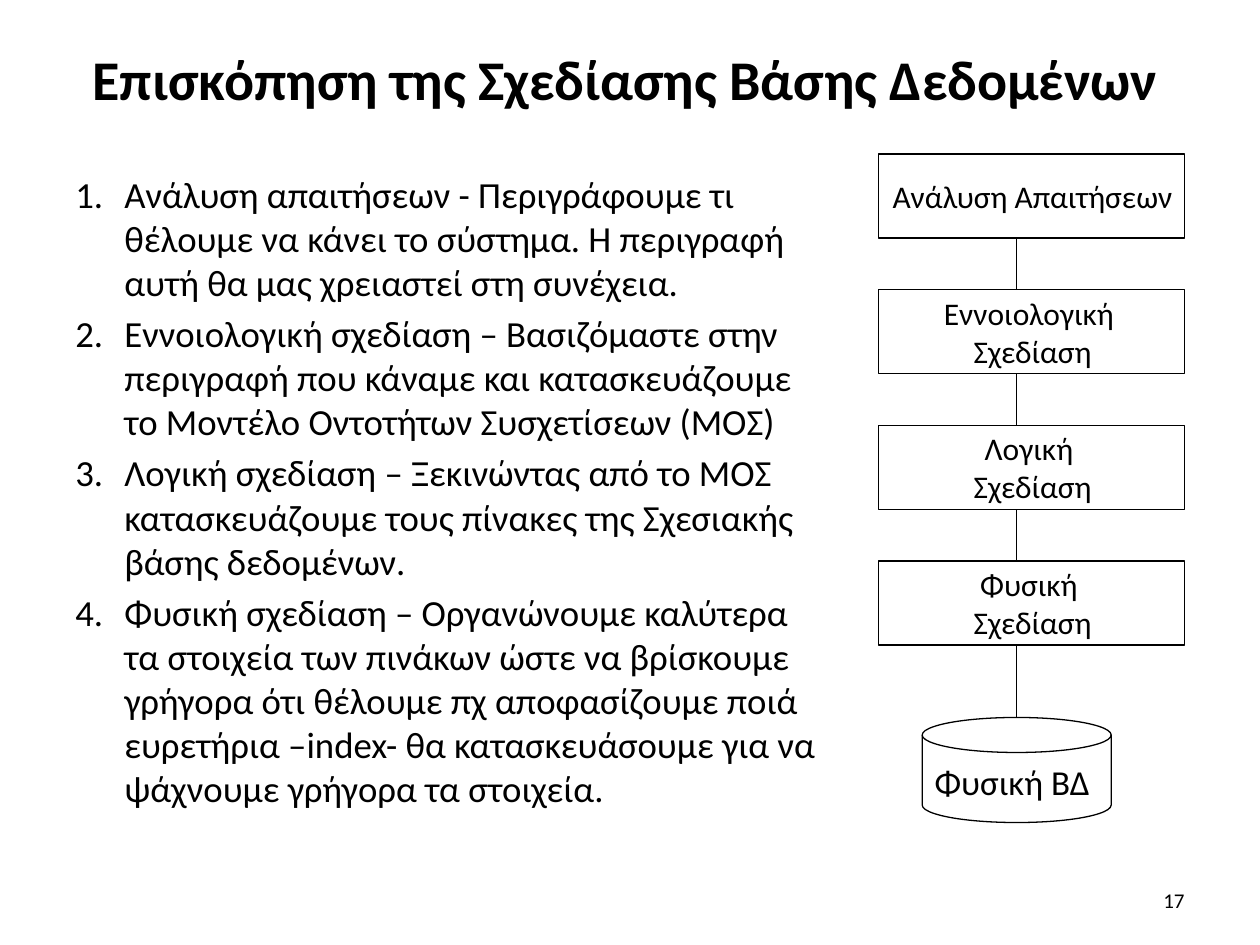
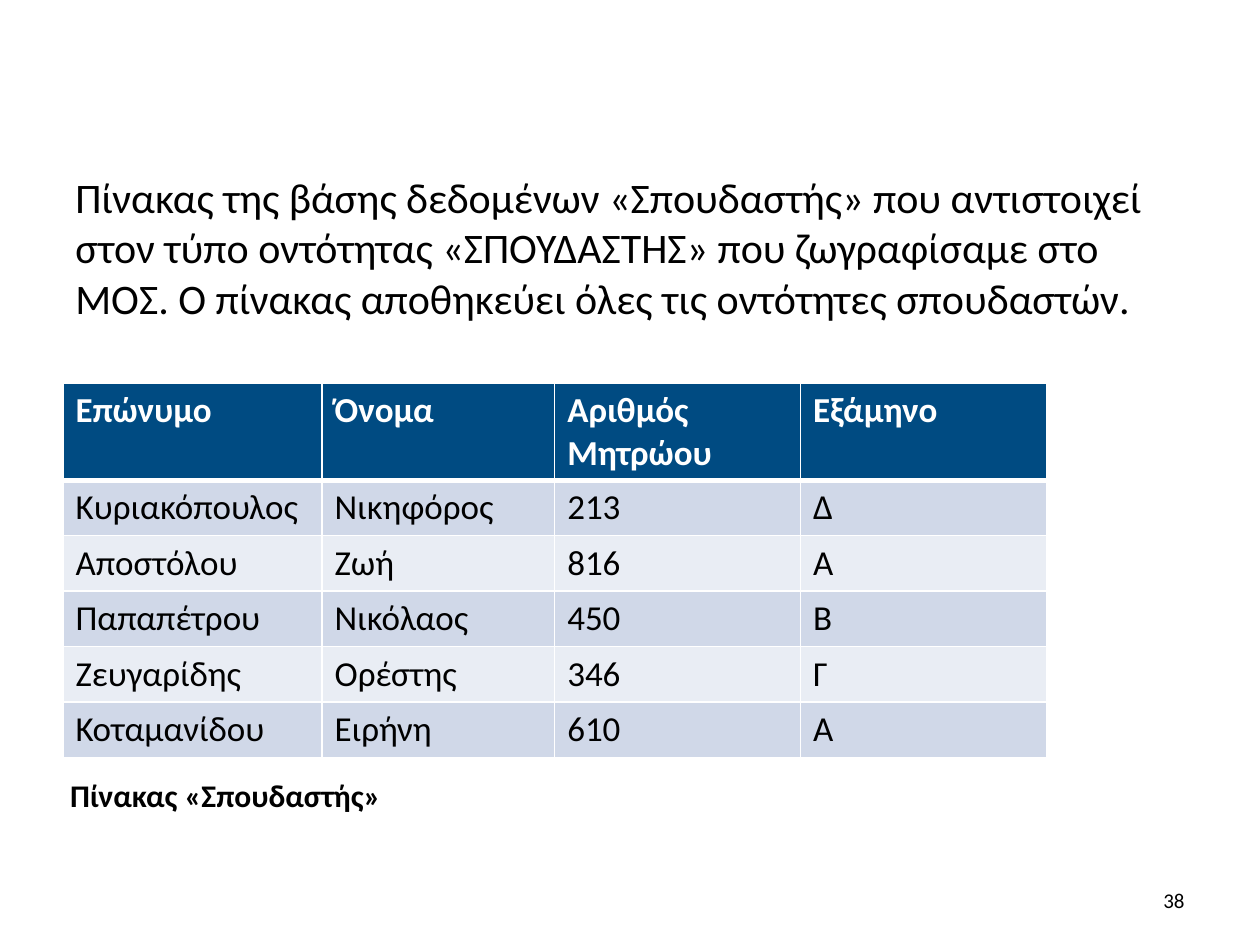
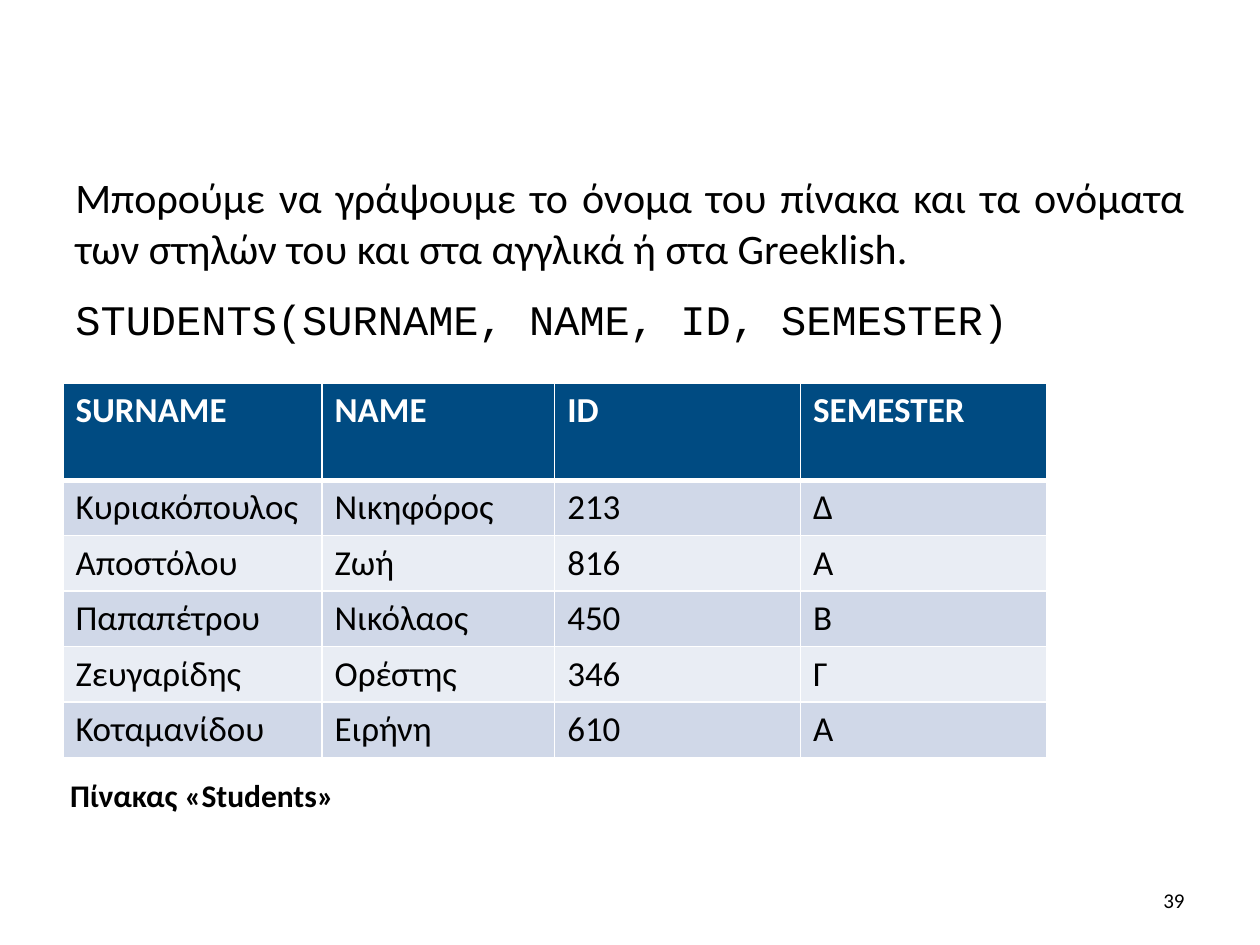
from dataclasses import dataclass

from lxml.etree import SubElement
from pptx import Presentation
from pptx.dml.color import RGBColor as Color
from pptx.enum.shapes import MSO_CONNECTOR as Connector, MSO_SHAPE as Shape
from pptx.enum.text import MSO_ANCHOR as Anchor, PP_ALIGN as Align
from pptx.oxml import parse_xml
from pptx.oxml.ns import nsdecls, qn
from pptx.util import Pt


@dataclass(frozen=True)
class Theme:
    ink: str = "000000"
    paper: str = "FFFFFF"
    header: str = "004B82"
    bands: tuple = ("D0D8E8", "E9EDF4")
    font: str = "Calibri"
    code_font: str = "Courier New"
    title: int = 32
    body: int = 24
    steps: int = 21
    cell: int = 20
    label: int = 18
    number: int = 12
    line: float = 0.75


THEME = Theme()


class SlideWriter:
    """Holds the theme, the deck and the slide being written."""

    def __init__(self, deck, theme):
        self.deck, self.theme = deck, theme
        self.page = None

    def start(self, number):
        self.page = self.deck.slides.add_slide(self.deck.slide_layouts[6])
        self.text((516, 500, 168, 29), [str(number)], self.theme.number,
                  align=Align.RIGHT, anchor=Anchor.MIDDLE)

    def span(self, para, content, size, bold=False, color=None, font=None):
        span = para.add_run()
        span.text = content
        span.font.size = Pt(size)
        span.font.bold = bold
        span.font.name = font or self.theme.font
        span.font.color.rgb = Color.from_string(color or self.theme.ink)

    def text(self, area, lines, size, bold=False, align=Align.LEFT,
             anchor=Anchor.TOP, gap=0, wrap=True, numbered=False, fonts=()):
        box = self.page.shapes.add_textbox(*map(Pt, area))
        frame = box.text_frame
        frame.word_wrap = wrap
        frame.vertical_anchor = anchor
        for index, line in enumerate(lines):
            para = frame.add_paragraph() if index else frame.paragraphs[0]
            para.alignment = align
            para.space_before = Pt(gap if index else 0)
            font = fonts[index] if fonts else None
            self.span(para, line, size, bold, font=font)
            if numbered:
                self.number(para)
        return frame

    def number(self, para, indent=28):
        props = para._p.get_or_add_pPr()
        props.set("marL", str(Pt(indent)))
        props.set("indent", str(-Pt(indent)))
        SubElement(props, qn("a:buFont"), typeface="+mj-lt")
        SubElement(props, qn("a:buAutoNum"), type="arabicPeriod")

    def title(self, content):
        self.text((37, 9, 648, 71), [content], self.theme.title, bold=True,
                  align=Align.CENTER, anchor=Anchor.MIDDLE)

    def outline(self, kind, area):
        shape = self.page.shapes.add_shape(kind, *map(Pt, area))
        shape.shadow.inherit = False
        shape.fill.background()
        shape.line.color.rgb = Color.from_string(self.theme.ink)
        shape.line.width = Pt(self.theme.line)

    def link(self, x, top, bottom):
        link = self.page.shapes.add_connector(
            Connector.STRAIGHT, Pt(x), Pt(top), Pt(x), Pt(bottom))
        link.line.color.rgb = Color.from_string(self.theme.ink)
        link.line.width = Pt(self.theme.line)
        SubElement(link._element.spPr, qn("a:effectLst"))

    def borders(self, cell, top, bottom):
        props = cell._tc.get_or_add_tcPr()
        widths = {"lnL": 1, "lnR": 1, "lnT": top, "lnB": bottom}
        for index, (edge, width) in enumerate(widths.items()):
            props.insert(index, parse_xml(
                f'<a:{edge} {nsdecls("a")} w="{Pt(width)}"><a:solidFill>'
                f'<a:srgbClr val="{self.theme.paper}"/></a:solidFill></a:{edge}>'))

    def table(self, left, top, widths, heights, rows):
        frame = self.page.shapes.add_table(
            len(rows), len(widths), Pt(left), Pt(top),
            Pt(sum(widths)), Pt(sum(heights)))
        table = frame.table
        table.first_row = table.horz_banding = False
        for column, width in zip(table.columns, widths):
            column.width = Pt(width)
        for r, values in enumerate(rows):
            table.rows[r].height = Pt(heights[r])
            is_header = r == 0
            fill = self.theme.header if is_header else self.theme.bands[(r - 1) % 2]
            color = self.theme.paper if is_header else self.theme.ink
            for c, value in enumerate(values):
                cell = table.cell(r, c)
                cell.fill.solid()
                cell.fill.fore_color.rgb = Color.from_string(fill)
                self.borders(cell, 3 if r == 1 else 1, 3 if is_header else 1)
                self.span(cell.text_frame.paragraphs[0], value,
                          self.theme.cell, is_header, color)


# Content
DESIGN_STEPS = [
    "Ανάλυση απαιτήσεων - Περιγράφουμε τι θέλουμε να κάνει το σύστημα. "
    "Η περιγραφή αυτή θα μας χρειαστεί στη συνέχεια.",
    "Εννοιολογική σχεδίαση – Βασιζόμαστε στην περιγραφή που κάναμε και "
    "κατασκευάζουμε το Μοντέλο Οντοτήτων Συσχετίσεων (ΜΟΣ)",
    "Λογική σχεδίαση – Ξεκινώντας από το ΜΟΣ κατασκευάζουμε τους πίνακες "
    "της Σχεσιακής βάσης δεδομένων.",
    "Φυσική σχεδίαση – Οργανώνουμε καλύτερα τα στοιχεία των πινάκων ώστε να "
    "βρίσκουμε γρήγορα ότι θέλουμε πχ αποφασίζουμε ποιά ευρετήρια –index- θα "
    "κατασκευάσουμε για να ψάχνουμε γρήγορα τα στοιχεία.",
]
FLOW_LABELS = [
    ["Ανάλυση Απαιτήσεων"],
    ["Εννοιολογική ", "Σχεδίαση"],
    ["Λογική ", "Σχεδίαση"],
    ["Φυσική ", "Σχεδίαση"],
]
STUDENTS = [
    ["Κυριακόπουλος", "Νικηφόρος", "213", "Δ"],
    ["Αποστόλου", "Ζωή", "816", "Α"],
    ["Παπαπέτρου", "Νικόλαος", "450", "Β"],
    ["Ζευγαρίδης", "Ορέστης", "346", "Γ"],
    ["Κοταμανίδου", "Ειρήνη", "610", "Α"],
]


def add_design_flow(writer):
    left, top, width, height, pitch = 502, 88, 175, 48, 77.5
    link_x, disk_top = 581, 410
    for index, lines in enumerate(FLOW_LABELS):
        step_top = top + index * pitch
        is_last = index == len(FLOW_LABELS) - 1
        writer.outline(Shape.FLOWCHART_PROCESS, (left, step_top, width, height))
        writer.text((left - 11, step_top - 1, width + 23, height + 2), lines,
                    THEME.label, align=Align.CENTER, anchor=Anchor.MIDDLE)
        writer.link(link_x, step_top + height,
                    disk_top if is_last else step_top + pitch)
    writer.outline(Shape.FLOWCHART_MAGNETIC_DISK, (527, disk_top, 108, 60))
    writer.text((527, 431, 104, 32), ["Φυσική ΒΔ"], THEME.cell, wrap=False)


def add_student_table(writer, header, caption, caption_width):
    writer.table(36, 219, [148, 133, 140.5, 140.5], [55.4] + [31.7] * 5,
                 [header] + STUDENTS)
    writer.text((33, 440, caption_width, 29), [caption], THEME.label,
                bold=True, wrap=False)


def main():
    deck = Presentation()
    deck.slide_width, deck.slide_height = Pt(720), Pt(540)
    writer = SlideWriter(deck, THEME)

    # Design overview
    writer.start(17)
    writer.title("Επισκόπηση της Σχεδίασης Βάσης Δεδομένων ")
    writer.text((36, 94.5, 441, 397), DESIGN_STEPS, THEME.steps,
                gap=4, numbered=True)
    add_design_flow(writer)

    # Table with Greek headings
    writer.start(38)
    writer.text((36, 94.5, 648, 97), [
        "Πίνακας της βάσης δεδομένων «Σπουδαστής» που αντιστοιχεί στον τύπο "
        "οντότητας «ΣΠΟΥΔΑΣΤΗΣ» που ζωγραφίσαμε στο ΜΟΣ. Ο πίνακας "
        "αποθηκεύει όλες τις οντότητες σπουδαστών."], THEME.body)
    add_student_table(writer, ["Επώνυμο", "Όνομα", "Αριθμός Μητρώου", "Εξάμηνο"],
                      "Πίνακας «Σπουδαστής»", 194)

    # Table with English headings
    writer.start(39)
    frame = writer.text((36, 94.5, 648, 397), [
        "Μπορούμε να γράψουμε το όνομα του πίνακα και τα ονόματα των στηλών "
        "του και στα αγγλικά ή στα Greeklish.",
        "STUDENTS(SURNAME, NAME, ID, SEMESTER)"], THEME.body,
        gap=12, fonts=(THEME.font, THEME.code_font))
    frame.paragraphs[0].alignment = Align.JUSTIFY
    add_student_table(writer, ["SURNAME", "NAME", "ID", "SEMESTER"],
                      "Πίνακας «Students»", 167)

    deck.save("out.pptx")


if __name__ == "__main__":
    main()
